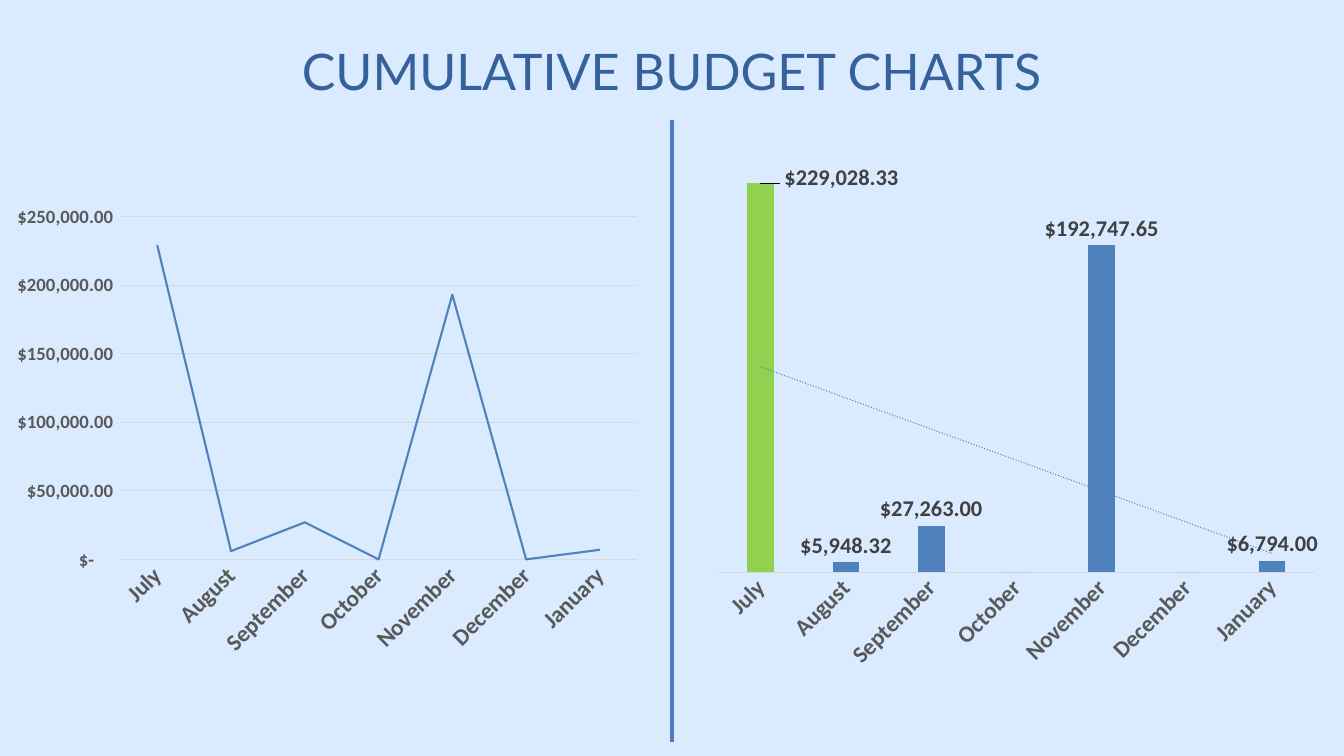
from copy import deepcopy
from typing import NamedTuple

from lxml.etree import SubElement
from pptx import Presentation
from pptx.chart.chart import Chart
from pptx.chart.data import CategoryChartData
from pptx.dml.color import RGBColor
from pptx.enum.chart import XL_CHART_TYPE, XL_LABEL_POSITION, XL_TICK_MARK
from pptx.enum.shapes import MSO_CONNECTOR
from pptx.enum.text import MSO_ANCHOR, MSO_AUTO_SIZE, PP_ALIGN
from pptx.oxml import parse_xml
from pptx.oxml.ns import nsdecls, qn
from pptx.slide import Slide
from pptx.text.text import Font
from pptx.util import Inches, Pt

BACKGROUND = RGBColor(0xDA, 0xEB, 0xFF)
TITLE_BLUE = RGBColor(0x37, 0x61, 0x9B)
DIVIDER_BLUE = RGBColor(0x4B, 0x7E, 0xBC)
SERIES_BLUE = RGBColor(0x4F, 0x81, 0xBD)
HIGHLIGHT_GREEN = RGBColor(0x92, 0xD0, 0x50)
AXIS_GRAY = RGBColor(0x59, 0x59, 0x59)
LABEL_GRAY = RGBColor(0x40, 0x40, 0x40)
GRID_GRAY = RGBColor(0xD9, 0xD9, 0xD9)
BLACK = RGBColor(0, 0, 0)

MONTHS = ["July", "August", "September", "October", "November", "December", "January"]
ACCOUNTING = '_("$"* #,##0.00_);_("$"* \\(#,##0.00\\);_("$"* "-"??_);_(@_)'


class BudgetChart(NamedTuple):
    kind: XL_CHART_TYPE
    left: float
    top: float
    width: float
    height: float
    values: list[float]


LINE_CHART = BudgetChart(
    XL_CHART_TYPE.LINE, 0, 2.91, 9.67, 7,
    [229000, 6000, 27000, 0, 193000, 0, 7000],
)
COLUMN_CHART = BudgetChart(
    XL_CHART_TYPE.COLUMN_CLUSTERED, 10.5, 2.04, 9.25, 8.08,
    [229028.33, 5948.32, 27263, 0, 192747.65, 0, 6794],
)


def format_font(font: Font, size: float, color: RGBColor, bold: bool = True) -> None:
    font.name = "Calibri"
    font.size = Pt(size)
    font.bold = bold
    font.color.rgb = color


def add_title(slide: Slide, text: str) -> None:
    title = slide.shapes.title
    title.left, title.top = Inches(1.82), Inches(0.19)
    title.width, title.height = Inches(16.35), Inches(1.18)
    frame = title.text_frame
    frame.text = text
    frame.word_wrap = True
    frame.auto_size = MSO_AUTO_SIZE.SHAPE_TO_FIT_TEXT
    frame.vertical_anchor = MSO_ANCHOR.TOP
    frame.margin_left = frame.margin_right = frame.margin_top = frame.margin_bottom = 0
    paragraph = frame.paragraphs[0]
    paragraph.alignment = PP_ALIGN.CENTER
    paragraph.line_spacing = Pt(93.8)
    font = paragraph.runs[0].font
    font.name = "Lato"
    font.size = Pt(54)
    font.color.rgb = TITLE_BLUE


def add_budget_chart(slide: Slide, budget: BudgetChart) -> Chart:
    """Add a chart with the month axis and the settings both charts share."""
    data = CategoryChartData(number_format=ACCOUNTING)
    data.categories = MONTHS
    data.add_series("Series 1", budget.values)
    box = [Inches(length) for length in budget[1:5]]
    chart = slide.shapes.add_chart(budget.kind, *box, data).chart
    chart.has_legend = False
    chart.has_title = False
    format_font(chart.font, 10, BLACK, bold=False)

    months = chart.category_axis
    months.major_tick_mark = months.minor_tick_mark = XL_TICK_MARK.NONE
    months.format.line.color.rgb = GRID_GRAY
    months.format.line.width = Pt(0.75)
    format_font(months.tick_labels.font, 25, AXIS_GRAY)
    body = months._element.find(f"{qn('c:txPr')}/{qn('a:bodyPr')}")
    body.set("rot", "-2700000")
    body.set("vert", "horz")
    return chart


def add_line_chart(slide: Slide) -> None:
    chart = add_budget_chart(slide, LINE_CHART)
    dollars = chart.value_axis
    dollars.major_tick_mark = dollars.minor_tick_mark = XL_TICK_MARK.NONE
    dollars.format.line.fill.background()
    dollars.major_gridlines.format.line.color.rgb = GRID_GRAY
    dollars.major_gridlines.format.line.width = Pt(0.75)
    dollars.tick_labels.number_format = ACCOUNTING
    dollars.tick_labels.number_format_is_linked = False
    format_font(dollars.tick_labels.font, 20, AXIS_GRAY)

    plot = chart.plots[0]
    plot.vary_by_categories = False
    series = plot.series[0]
    series.smooth = False
    series.format.line.color.rgb = SERIES_BLUE
    series.format.line.width = Pt(2.25)


def add_column_chart(slide: Slide) -> None:
    chart = add_budget_chart(slide, COLUMN_CHART)
    chart.value_axis.visible = False
    chart.value_axis.has_major_gridlines = False

    plot = chart.plots[0]
    plot.vary_by_categories = False
    plot.gap_width = 219
    plot.overlap = -27
    series = plot.series[0]
    series.format.fill.solid()
    series.format.fill.fore_color.rgb = SERIES_BLUE
    highlight = series.points[0].format.fill
    highlight.solid()
    highlight.fore_color.rgb = HIGHLIGHT_GREEN

    labels = series.data_labels
    labels.show_value = True
    labels.position = XL_LABEL_POSITION.OUTSIDE_END
    labels.number_format = ACCOUNTING
    labels.number_format_is_linked = False
    format_font(labels.font, 24, LABEL_GRAY)
    adjust_labels(labels._element)
    labels._element.addnext(parse_xml(
        f'<c:trendline {nsdecls("c", "a")}><c:spPr><a:ln w="{Pt(1.5)}" cap="rnd">'
        f'<a:solidFill><a:srgbClr val="{SERIES_BLUE}"/></a:solidFill>'
        '<a:prstDash val="sysDot"/></a:ln></c:spPr><c:trendlineType val="linear"/>'
        '<c:dispRSqr val="0"/><c:dispEq val="0"/></c:trendline>'
    ))


def adjust_labels(labels) -> None:
    """Move July's label to the right of its bar and drop the labels of empty months."""
    july = parse_xml(
        f'<c:dLbl {nsdecls("c")}><c:idx val="0"/><c:layout><c:manualLayout>'
        '<c:x val="0.13"/><c:y val="0.02"/></c:manualLayout></c:layout></c:dLbl>'
    )
    for setting in labels:
        if setting.tag != qn("c:showLeaderLines"):
            july.append(deepcopy(setting))
    point_labels = [july]
    for index, value in enumerate(COLUMN_CHART.values):
        if value == 0:
            point_labels.append(parse_xml(
                f'<c:dLbl {nsdecls("c")}><c:idx val="{index}"/><c:delete val="1"/></c:dLbl>'
            ))
    for position, label in enumerate(point_labels):
        labels.insert(position, label)


def add_divider(slide: Slide) -> None:
    divider = slide.shapes.add_connector(
        MSO_CONNECTOR.STRAIGHT, Inches(10), Inches(1.78), Inches(10), Inches(11.04)
    )
    divider.line.color.rgb = DIVIDER_BLUE
    divider.line.width = Pt(3.5)
    SubElement(divider._element.spPr, qn("a:effectLst"))


def main() -> None:
    presentation = Presentation()
    presentation.slide_width = Inches(20)
    presentation.slide_height = Inches(11.25)
    slide = presentation.slides.add_slide(presentation.slide_layouts[5])
    slide.background.fill.solid()
    slide.background.fill.fore_color.rgb = BACKGROUND

    add_title(slide, "CUMULATIVE BUDGET CHARTS")
    add_line_chart(slide)
    add_column_chart(slide)
    add_divider(slide)
    presentation.save("out.pptx")


if __name__ == "__main__":
    main()
